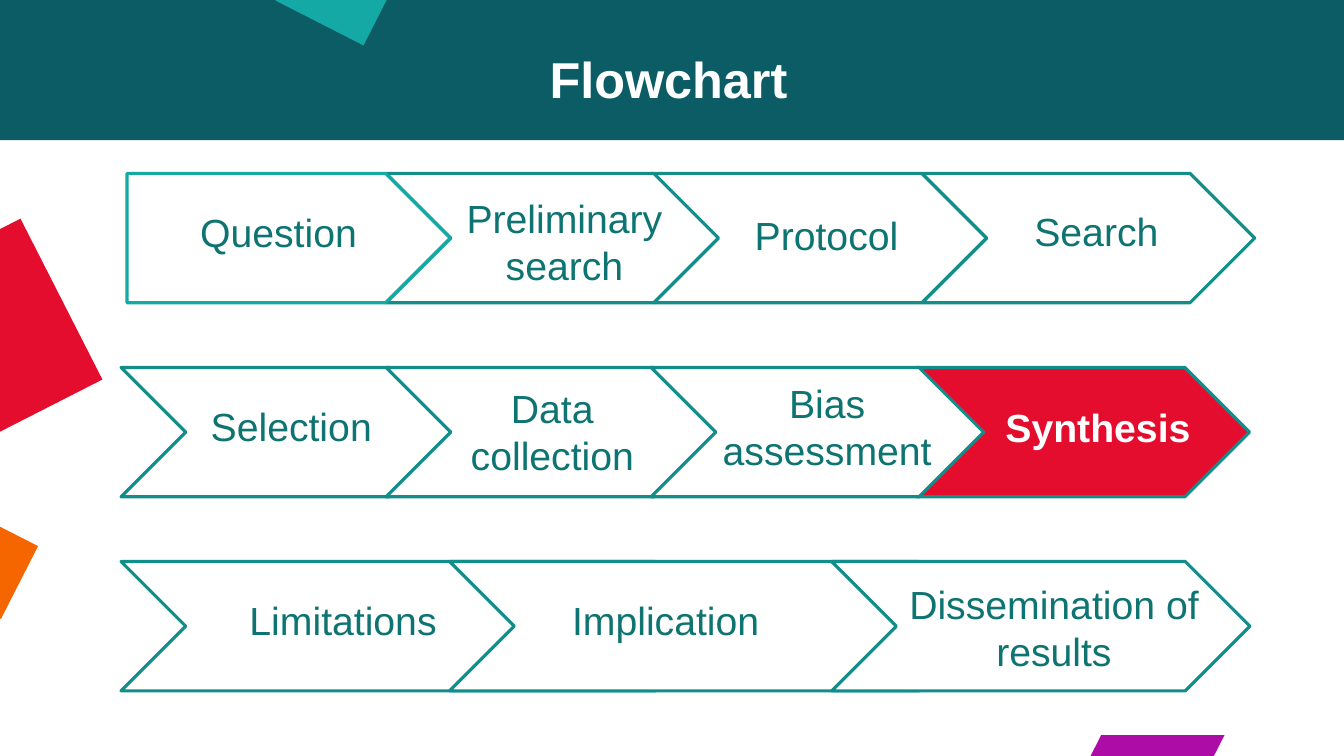
from pptx import Presentation
from pptx.dml.color import RGBColor
from pptx.enum import shapes, text
from pptx.util import Cm, Pt

WHITE, TEAL, INK, RED, AQUA = "FFFFFF", "118D8A", "0E7472", "E50D2E", "15A9A6"
SLIDE_WIDTH, SLIDE_HEIGHT = 33.87, 19.05

# left, top, width, height, rotation, colour; the white block trims the purple square
BACKDROP = [
    (0, 0, SLIDE_WIDTH, 3.53, 0, "0C5C65"),
    (-2.77, 6.3, 4.57, 4.55, 333, RED),
    (27.66, 17.65, 2.77, 2.77, 27, "AD0DA6"),
    (-1.55, 13.16, 2.16, 2.06, 27, "F56600"),
    (7.39, -1.85, 2.49, 2.57, 27, AQUA),
    (24.46, 15.95, 8.15, 2.57, 0, WHITE),
]

TITLE = "Flowchart"
ROW_TOP, ROW_STEP, STEP_HEIGHT = 4.37, 4.89, 3.26

# row, step left, step width, wording, label left, label drop, label width
STEPS = [
    (1, 23.11, 8.38, "Synthesis", 24.99, 0.78, 5.36),
    (0, 9.73, 8.38, "Preliminary search", 11.1, 0.41, 6.25),
    (0, 3.2, 8.15, "Question", 3.73, 0.76, 6.58),
    (0, 16.48, 8.38, "Protocol", 18.14, 0.84, 5.38),
    (0, 23.24, 8.38, "Search", 24.99, 0.74, 5.28),
    (1, 3.05, 8.38, "Selection", 4.37, 0.76, 5.94),
    (1, 9.73, 8.38, "Data\vcollection", 10.95, 0.3, 5.94),
    (1, 16.41, 8.38, "Bias assessment", 17.91, 0.17, 5.87),
    (2, 3.05, 15.09, "Limitations", 3.3, 0.74, 10.69),
    (2, 11.33, 13.46, "Implication", 11.43, 0.74, 10.69),
    (2, 20.96, 10.54, "Dissemination of results", 21.29, 0.35, 10.54),
]
FIRST_STEP, CURRENT_STEP = "Question", "Synthesis"


def colour(value):
    return RGBColor.from_string(value)


def add_block(page, kind, left, top, width, height, fill=None, line=None):
    block = page.shapes.add_shape(kind, Cm(left), Cm(top), Cm(width), Cm(height))
    block.shadow.inherit = False
    if fill:
        block.fill.solid()
        block.fill.fore_color.rgb = colour(fill)
    else:
        block.fill.background()
    if line:
        block.line.color.rgb = colour(line)
        block.line.width = Pt(2.25)
    else:
        block.line.fill.background()
    return block


def add_label(page, wording, left, top, width, size, ink, bold=False, spacing=None):
    box = page.shapes.add_textbox(Cm(left), Cm(top), Cm(width), Cm(1.45))
    box.text_frame.word_wrap = True
    para = box.text_frame.paragraphs[0]
    para.alignment = text.PP_ALIGN.CENTER
    para.line_spacing = spacing
    for index, part in enumerate(wording.split("\v")):
        if index:
            para.add_line_break()
        span = para.add_run()
        span.text = part
        span.font.name = "Arial"
        span.font.size = Pt(size)
        span.font.bold = bold
        span.font.color.rgb = colour(ink)


def add_step(page, row, left, width, wording, label_left, drop, label_width):
    """Draw one arrow of the process with its label."""
    top = ROW_TOP + row * ROW_STEP
    kind, fill, line, ink = shapes.MSO_SHAPE.CHEVRON, WHITE, TEAL, INK
    current = wording == CURRENT_STEP
    if wording == FIRST_STEP:
        kind, fill, line = shapes.MSO_SHAPE.PENTAGON, None, AQUA
    if current:
        fill, ink = RED, WHITE
    arrow = add_block(page, kind, left, top, width, STEP_HEIGHT, fill, line)
    arrow.adjustments[0] = 0.5
    add_label(page, wording, label_left, top + drop, label_width, 28, ink, current)


def main():
    deck = Presentation()
    deck.slide_width, deck.slide_height = Cm(SLIDE_WIDTH), Cm(SLIDE_HEIGHT)
    page = deck.slides.add_slide(deck.slide_layouts[6])
    for left, top, width, height, turn, fill in BACKDROP:
        block = add_block(page, shapes.MSO_SHAPE.RECTANGLE, left, top, width, height, fill)
        block.rotation = turn
    add_label(page, TITLE, 7.59, 1.27, 18.52, 36, WHITE, True, 0.9)
    for step in STEPS:
        add_step(page, *step)
    deck.save("out.pptx")


if __name__ == "__main__":
    main()
